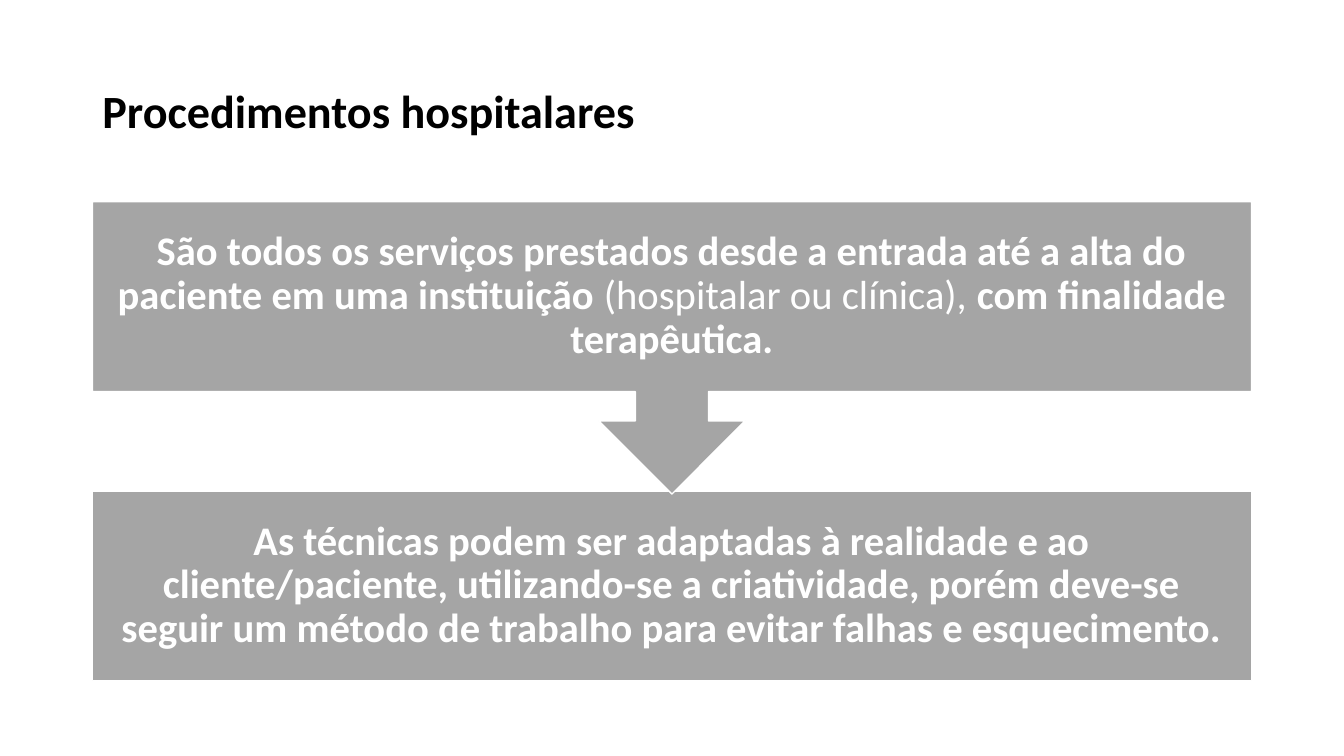
from pptx import Presentation
from pptx.dml.color import RGBColor
from pptx.enum.shapes import MSO_SHAPE
from pptx.enum.text import MSO_ANCHOR, PP_ALIGN
from pptx.util import Cm, Pt

RECT = MSO_SHAPE.RECTANGLE
CALLOUT = MSO_SHAPE.DOWN_ARROW_CALLOUT
MIDDLE = MSO_ANCHOR.MIDDLE
LEFT, CENTER = PP_ALIGN.LEFT, PP_ALIGN.CENTER

BLACK = RGBColor(0x00, 0x00, 0x00)
WHITE = RGBColor(0xFF, 0xFF, 0xFF)
GRAY = RGBColor(0xA5, 0xA5, 0xA5)

EDGE, WIDTH = 2.33, 29.21
INSET = 0.57

TITLE = "Procedimentos hospitalares"
# Each step is a list of (text, bold) runs
SERVICES = [
    ("São todos os serviços prestados desde a entrada até a alta do "
     "paciente em uma instituição ", True),
    ("(hospitalar ou clínica), ", False),
    ("com finalidade terapêutica.", True),
]
METHODS = [
    ("As técnicas podem ser adaptadas à realidade e ao cliente/paciente, "
     "utilizando-se a criatividade, porém deve-se seguir um método de "
     "trabalho para evitar falhas e esquecimento.", True),
]


def write(frame, runs, size, color, align):
    """Fill a text frame with one paragraph of runs."""
    frame.word_wrap = True
    frame.vertical_anchor = MIDDLE
    para = frame.paragraphs[0]
    para.alignment = align
    para.line_spacing = 0.9
    para.font.name = "Calibri"
    para.font.size = Pt(size)
    para.font.color.rgb = color
    for text, bold in runs:
        run = para.add_run()
        run.text = text
        run.font.bold = bold


def add_title(slide, left, top, width, height):
    box = slide.shapes.add_textbox(Cm(left), Cm(top), Cm(width), Cm(height))
    write(box.text_frame, [(TITLE, True)], 33, BLACK, LEFT)


def add_step(slide, kind, runs, left, top, width, height):
    step = slide.shapes.add_shape(kind, Cm(left), Cm(top), Cm(width), Cm(height))
    step.shadow.inherit = False
    step.fill.solid()
    step.fill.fore_color.rgb = GRAY
    step.line.color.rgb = WHITE
    step.line.width = Pt(1)
    frame = step.text_frame
    frame.margin_left = frame.margin_right = Cm(INSET)
    frame.margin_top = frame.margin_bottom = Cm(INSET)
    write(frame, runs, 29, WHITE, CENTER)


def add_flow(slide, left, top, width, height):
    """Stack the two steps; the arrow of the first reaches the second."""
    low = 4.78
    add_step(slide, RECT, METHODS, left, top + height - low, width, low)
    add_step(slide, CALLOUT, SERVICES, left, top, width, 7.37)


def main():
    deck = Presentation()
    deck.slide_width, deck.slide_height = Cm(33.87), Cm(19.05)
    slide = deck.slides.add_slide(deck.slide_layouts[6])
    add_title(slide, EDGE, 1.02, WIDTH, 3.68)
    add_flow(slide, EDGE, 5.08, WIDTH, 12.07)
    deck.save("out.pptx")


if __name__ == "__main__":
    main()
